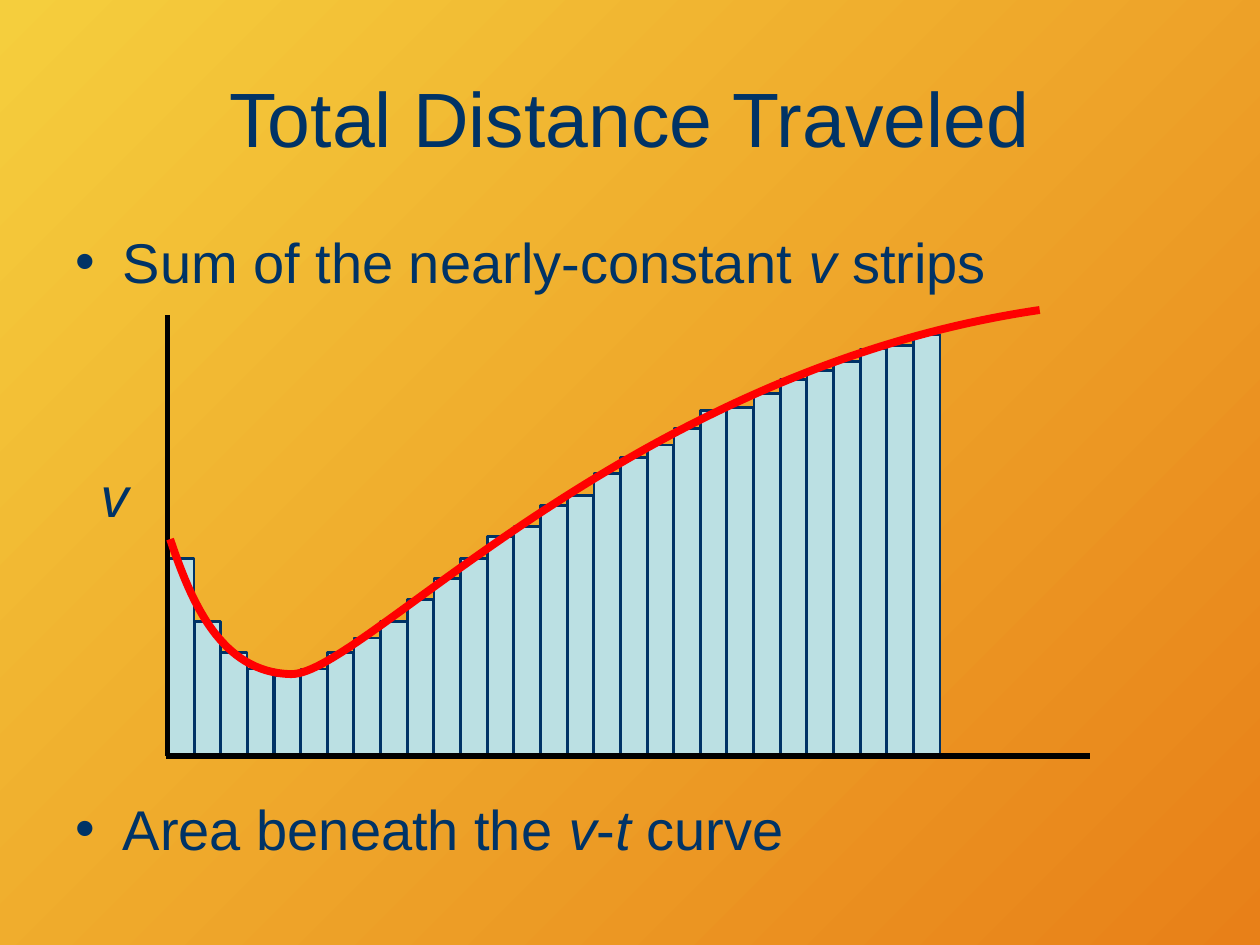
from dataclasses import dataclass
from typing import Any

import lxml.etree
import pptx
import pptx.dml.color
import pptx.enum.shapes
import pptx.enum.text
import pptx.oxml.ns
import pptx.util

Cm = pptx.util.Cm
Pt = pptx.util.Pt
RGBColor = pptx.dml.color.RGBColor

NAVY = RGBColor(0x00, 0x33, 0x66)
PALE_BLUE = RGBColor(0xBB, 0xE0, 0xE3)
BLACK = RGBColor(0x00, 0x00, 0x00)
RED = RGBColor(0xFF, 0x00, 0x00)
YELLOW = RGBColor(0xF5, 0xCE, 0x3D)
ORANGE = RGBColor(0xE8, 0x80, 0x18)

STRIP_HEIGHTS = [
    4.01, 2.74, 2.11, 1.78, 1.65, 1.78, 2.11, 2.41, 2.74, 3.18,
    3.61, 4.01, 4.45, 4.65, 5.08, 5.28, 5.72, 6.05, 6.3, 6.63,
    6.99, 7.06, 7.34, 7.62, 7.8, 7.98, 8.23, 8.31, 8.53,
]
FIRST_STRIP_LEFT = 3.38
LAST_STRIP_LEFT = 18.42
STRIP_WIDTH = 0.53
STRIP_BOTTOM = 15.27
STRIP_PITCH = (LAST_STRIP_LEFT - FIRST_STRIP_LEFT) / (len(STRIP_HEIGHTS) - 1)

CURVE_POINTS = [
    (3.43, 10.87),
    (3.86, 12.14), (4.45, 13.56), (5.87, 13.59),
    (7.29, 13.61), (12.62, 7.47), (20.96, 6.25),
]


@dataclass(frozen=True)
class TextRun:
    text: str
    italic: bool = False


@dataclass(frozen=True)
class TextBlock:
    left: float
    top: float
    width: float
    height: float
    size: int
    runs: tuple[TextRun, ...]


@dataclass(frozen=True)
class Axis:
    start: tuple[float, float]
    end: tuple[float, float]


TITLE = TextBlock(1.27, 0.76, 22.86, 3.18, 44, (TextRun("Total Distance Traveled"),))
STRIPS_POINT = TextBlock(1.27, 4.45, 22.86, 1.9, 32, (
    TextRun("Sum of the nearly-constant "), TextRun("v", True), TextRun(" strips"),
))
AREA_POINT = TextBlock(1.27, 15.88, 22.86, 1.9, 32, (
    TextRun("Area beneath the "), TextRun("v", True), TextRun("-"),
    TextRun("t", True), TextRun(" curve"),
))
VELOCITY_LABEL = TextBlock(1.78, 9.17, 1.09, 1.63, 32, (TextRun("v", True),))
AXES = [
    Axis((3.38, 6.35), (3.38, 15.24)),
    Axis((21.97, 15.24), (3.35, 15.24)),
]


def apply_format(target: Any, values: dict[str, Any]) -> None:
    for name, value in values.items():
        setattr(target, name, value)


def style_line(shape: Any, color: RGBColor, width: float) -> None:
    shape.line.color.rgb = color
    shape.line.width = Pt(width)


def fill_text(shape: Any, block: TextBlock, frame_format: dict[str, Any]) -> None:
    apply_format(shape, {
        "left": Cm(block.left), "top": Cm(block.top),
        "width": Cm(block.width), "height": Cm(block.height),
    })
    apply_format(shape.text_frame, frame_format)
    paragraph = shape.text_frame.paragraphs[0]
    for text_run in block.runs:
        run = paragraph.add_run()
        run.text = text_run.text
        apply_format(run.font, {
            "name": "Arial", "size": Pt(block.size), "italic": text_run.italic,
        })
        run.font.color.rgb = NAVY


def draw_background(slide: Any) -> None:
    fill = slide.background.fill
    fill.gradient()
    fill.gradient_angle = 315
    for stop, color in zip(fill.gradient_stops, (YELLOW, ORANGE)):
        stop.color.rgb = color


def draw_strips(slide: Any) -> None:
    group = slide.shapes.add_group_shape()
    for index, height in enumerate(STRIP_HEIGHTS):
        strip = group.shapes.add_shape(
            pptx.enum.shapes.MSO_SHAPE.RECTANGLE,
            Cm(FIRST_STRIP_LEFT + index * STRIP_PITCH), Cm(STRIP_BOTTOM - height),
            Cm(STRIP_WIDTH), Cm(height),
        )
        strip.shadow.inherit = False
        strip.fill.solid()
        strip.fill.fore_color.rgb = PALE_BLUE
        style_line(strip, NAVY, 1.5)


def draw_axes(slide: Any) -> None:
    group = slide.shapes.add_group_shape()
    for axis in AXES:
        connector = group.shapes.add_connector(
            pptx.enum.shapes.MSO_CONNECTOR.STRAIGHT,
            *(Cm(value) for value in axis.start + axis.end),
        )
        style_line(connector, BLACK, 3)
        lxml.etree.SubElement(
            connector._element.spPr, pptx.oxml.ns.qn("a:effectLst")
        )


def draw_curve(slide: Any) -> None:
    points = [(Cm(x), Cm(y)) for x, y in CURVE_POINTS]
    builder = slide.shapes.build_freeform(*points[0])
    builder.add_line_segments(points[1:], close=False)
    curve = builder.convert_to_shape()
    curve.shadow.inherit = False
    curve.fill.background()
    style_line(curve, RED, 4.5)
    segments = curve._element.xpath(".//a:lnTo")
    for start in range(0, len(segments), 3):
        outline = segments[start].getparent()
        bezier = lxml.etree.SubElement(outline, pptx.oxml.ns.qn("a:cubicBezTo"))
        for segment in segments[start:start + 3]:
            bezier.append(segment[0])
            outline.remove(segment)


def main() -> None:
    presentation = pptx.Presentation()
    apply_format(presentation, {"slide_width": Cm(25.4), "slide_height": Cm(19.05)})
    slide = presentation.slides.add_slide(presentation.slide_layouts[3])
    draw_background(slide)
    draw_strips(slide)

    fixed_frame = {
        "word_wrap": True, "auto_size": pptx.enum.text.MSO_AUTO_SIZE.NONE,
    }
    title, strips_point, area_point = slide.placeholders
    middle = {"vertical_anchor": pptx.enum.text.MSO_ANCHOR.MIDDLE}
    fill_text(title, TITLE, fixed_frame | middle)
    fill_text(strips_point, STRIPS_POINT, fixed_frame)
    fill_text(area_point, AREA_POINT, fixed_frame)

    draw_axes(slide)
    label = slide.shapes.add_textbox(0, 0, 0, 0)
    fill_text(label, VELOCITY_LABEL, {
        "word_wrap": False,
        "auto_size": pptx.enum.text.MSO_AUTO_SIZE.SHAPE_TO_FIT_TEXT,
    })
    draw_curve(slide)
    presentation.save("out.pptx")


if __name__ == "__main__":
    main()
